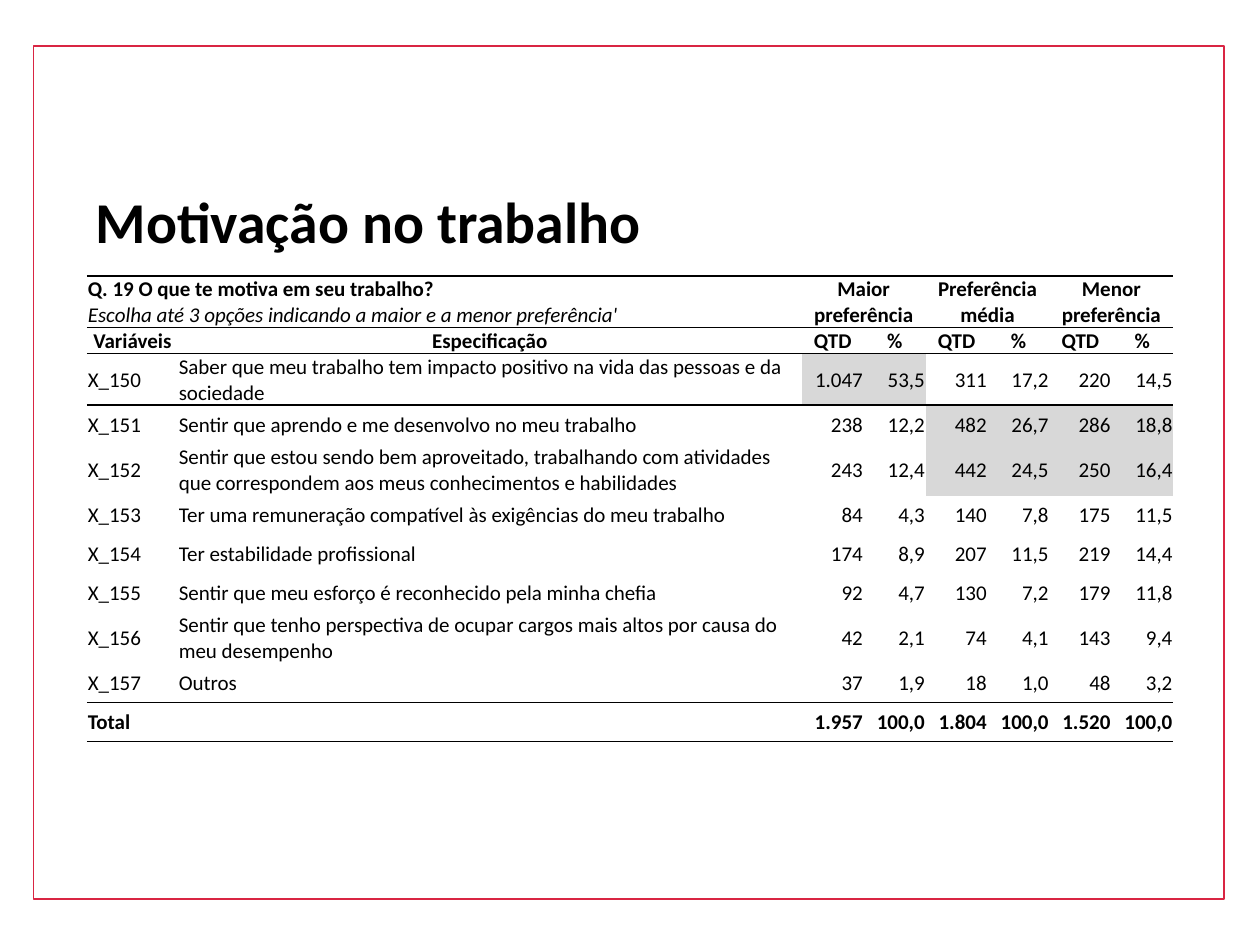
import lxml.etree
import pptx
import pptx.dml.color
import pptx.enum.shapes
import pptx.enum.text
import pptx.oxml.ns
import pptx.util

Pt = pptx.util.Pt
ALIGN = pptx.enum.text.PP_ALIGN
MIDDLE = pptx.enum.text.MSO_ANCHOR.MIDDLE
qn = pptx.oxml.ns.qn

BLACK = pptx.dml.color.RGBColor(0x00, 0x00, 0x00)
RED = pptx.dml.color.RGBColor(0xD9, 0x25, 0x43)
GREY = pptx.dml.color.RGBColor(0xD8, 0xD8, 0xD8)
FONT = "Calibri"
PLAIN_TABLE_STYLE = "{2D5ABB26-0587-4C30-8999-92F81FD0307C}"

QUESTION = (
    "Q. 19 O que te motiva em seu trabalho?",
    "Escolha até 3 opções indicando a maior e a menor preferência'",
)
GROUPS = ("Maior preferência", "Preferência média", "Menor preferência")
HEADINGS = ("Variáveis", "Especificação") + ("QTD", "%") * 3
ANSWERS = (
    ("X_150", "Saber que meu trabalho tem impacto positivo na vida das pessoas e da sociedade",
     "1.047", "53,5", "311", "17,2", "220", "14,5"),
    ("X_151", "Sentir que aprendo e me desenvolvo no meu trabalho",
     "238", "12,2", "482", "26,7", "286", "18,8"),
    ("X_152", "Sentir que estou sendo bem aproveitado, trabalhando com atividades "
     "que correspondem aos meus conhecimentos e habilidades",
     "243", "12,4", "442", "24,5", "250", "16,4"),
    ("X_153", "Ter uma remuneração compatível às exigências do meu trabalho",
     "84", "4,3", "140", "7,8", "175", "11,5"),
    ("X_154", "Ter estabilidade profissional",
     "174", "8,9", "207", "11,5", "219", "14,4"),
    ("X_155", "Sentir que meu esforço é reconhecido pela minha chefia",
     "92", "4,7", "130", "7,2", "179", "11,8"),
    ("X_156", "Sentir que tenho perspectiva de ocupar cargos mais altos por causa do meu desempenho",
     "42", "2,1", "74", "4,1", "143", "9,4"),
    ("X_157", "Outros", "37", "1,9", "18", "1,0", "48", "3,2"),
)
TOTAL = ("Total", "", "1.957", "100,0", "1.804", "100,0", "1.520", "100,0")

COLUMN_WIDTHS = [52, 356.5] + [35.4] * 6
TALL, HEADING, SINGLE = 29.5, 14.9, 22.2
ROW_HEIGHTS = [TALL, HEADING, TALL, SINGLE, TALL] + [SINGLE] * 3 + [TALL, SINGLE, SINGLE]
RULED_EDGES = {0, 1, 2, 3, 10, 11}
HIGHLIGHTS = {(2, 2), (2, 3)} | {(row, column) for row in (3, 4) for column in range(4, 8)}


def style_paragraph(paragraph, size, bold=False, italic=False, alignment=ALIGN.LEFT):
    """Set the font and alignment of a paragraph."""
    paragraph.alignment = alignment
    font = paragraph.font
    font.name, font.size, font.bold, font.italic = FONT, Pt(size), bold, italic
    font.color.rgb = BLACK


def add_frame(slide, left, top, width, height):
    """Draw the red outline around the slide content."""
    frame = slide.shapes.add_shape(
        pptx.enum.shapes.MSO_SHAPE.RECTANGLE, Pt(left), Pt(top), Pt(width), Pt(height))
    frame.shadow.inherit = False
    frame.fill.background()
    frame.line.color.rgb = RED
    frame.line.width = Pt(1)


def add_title(slide, left, top, width, height):
    """Write the slide title."""
    text_frame = slide.shapes.add_textbox(Pt(left), Pt(top), Pt(width), Pt(height)).text_frame
    text_frame.word_wrap = True
    text_frame.vertical_anchor = MIDDLE
    text_frame.margin_left = text_frame.margin_right = Pt(5)
    text_frame.margin_top = text_frame.margin_bottom = Pt(5)
    paragraph = text_frame.paragraphs[0]
    paragraph.text = "Motivação no trabalho"
    paragraph.line_spacing = 0.9
    style_paragraph(paragraph, 33, bold=True)


def draw_rules(cell, row):
    """Draw the horizontal rules that touch a cell and leave its sides open."""
    properties = cell._tc.get_or_add_tcPr()
    ruled = {"a:lnT": row in RULED_EDGES, "a:lnB": row + 1 in RULED_EDGES}
    for position, tag in enumerate(("a:lnL", "a:lnR", "a:lnT", "a:lnB")):
        line = lxml.etree.Element(qn(tag), w=str(Pt(1)))
        if ruled.get(tag):
            fill = lxml.etree.SubElement(line, qn("a:solidFill"))
            lxml.etree.SubElement(fill, qn("a:srgbClr"), val=str(BLACK))
        else:
            lxml.etree.SubElement(line, qn("a:noFill"))
        properties.insert(position, line)


def format_cell(cell, row, column):
    """Set the margins, fill and rules of a cell."""
    cell.vertical_anchor = MIDDLE
    cell.margin_left = cell.margin_right = cell.margin_top = Pt(0.5)
    cell.margin_bottom = 0
    if (row, column) in HIGHLIGHTS:
        cell.fill.solid()
        cell.fill.fore_color.rgb = GREY
    else:
        cell.fill.background()
    draw_rules(cell, row)


def fill_header(table):
    """Write the question and the three merged preference headings."""
    for column in range(0, len(COLUMN_WIDTHS), 2):
        table.cell(0, column).merge(table.cell(0, column + 1))
    text_frame = table.cell(0, 0).text_frame
    text_frame.text = "\n".join(QUESTION)
    style_paragraph(text_frame.paragraphs[0], 12, bold=True)
    style_paragraph(text_frame.paragraphs[1], 12, italic=True)
    for index, group in enumerate(GROUPS, start=1):
        paragraph = table.cell(0, 2 * index).text_frame.paragraphs[0]
        paragraph.text = group
        style_paragraph(paragraph, 12, bold=True, alignment=ALIGN.CENTER)


def add_answers_table(slide, left, top):
    """Build the table of answers by preference."""
    body = (HEADINGS,) + ANSWERS + (TOTAL,)
    graphic_frame = slide.shapes.add_table(
        len(ROW_HEIGHTS), len(COLUMN_WIDTHS), Pt(left), Pt(top),
        Pt(sum(COLUMN_WIDTHS)), Pt(sum(ROW_HEIGHTS)))
    table = graphic_frame.table
    table.first_row = table.horz_banding = False
    table._tbl.tblPr.find(qn("a:tableStyleId")).text = PLAIN_TABLE_STYLE
    for column, width in zip(table.columns, COLUMN_WIDTHS):
        column.width = Pt(width)
    for row, height in zip(table.rows, ROW_HEIGHTS):
        row.height = Pt(height)
    for row in range(len(ROW_HEIGHTS)):
        for column in range(len(COLUMN_WIDTHS)):
            format_cell(table.cell(row, column), row, column)
    fill_header(table)
    for row, values in enumerate(body, start=1):
        for column, value in enumerate(values):
            alignment = ALIGN.LEFT if column < 2 else ALIGN.RIGHT
            if values is HEADINGS:
                alignment = ALIGN.CENTER
            paragraph = table.cell(row, column).text_frame.paragraphs[0]
            paragraph.text = value
            style_paragraph(paragraph, 12, bold=values in (HEADINGS, TOTAL), alignment=alignment)


def main():
    """Build and save the presentation."""
    presentation = pptx.Presentation()
    presentation.slide_width, presentation.slide_height = Pt(720), Pt(540)
    slide = presentation.slides.add_slide(presentation.slide_layouts[6])
    add_frame(slide, 19.2, 26.2, 680.4, 487.4)
    add_title(slide, 49.7, 89.3, 620.6, 78.5)
    add_answers_table(slide, 49.7, 157.7)
    presentation.save("out.pptx")


if __name__ == "__main__":
    main()
